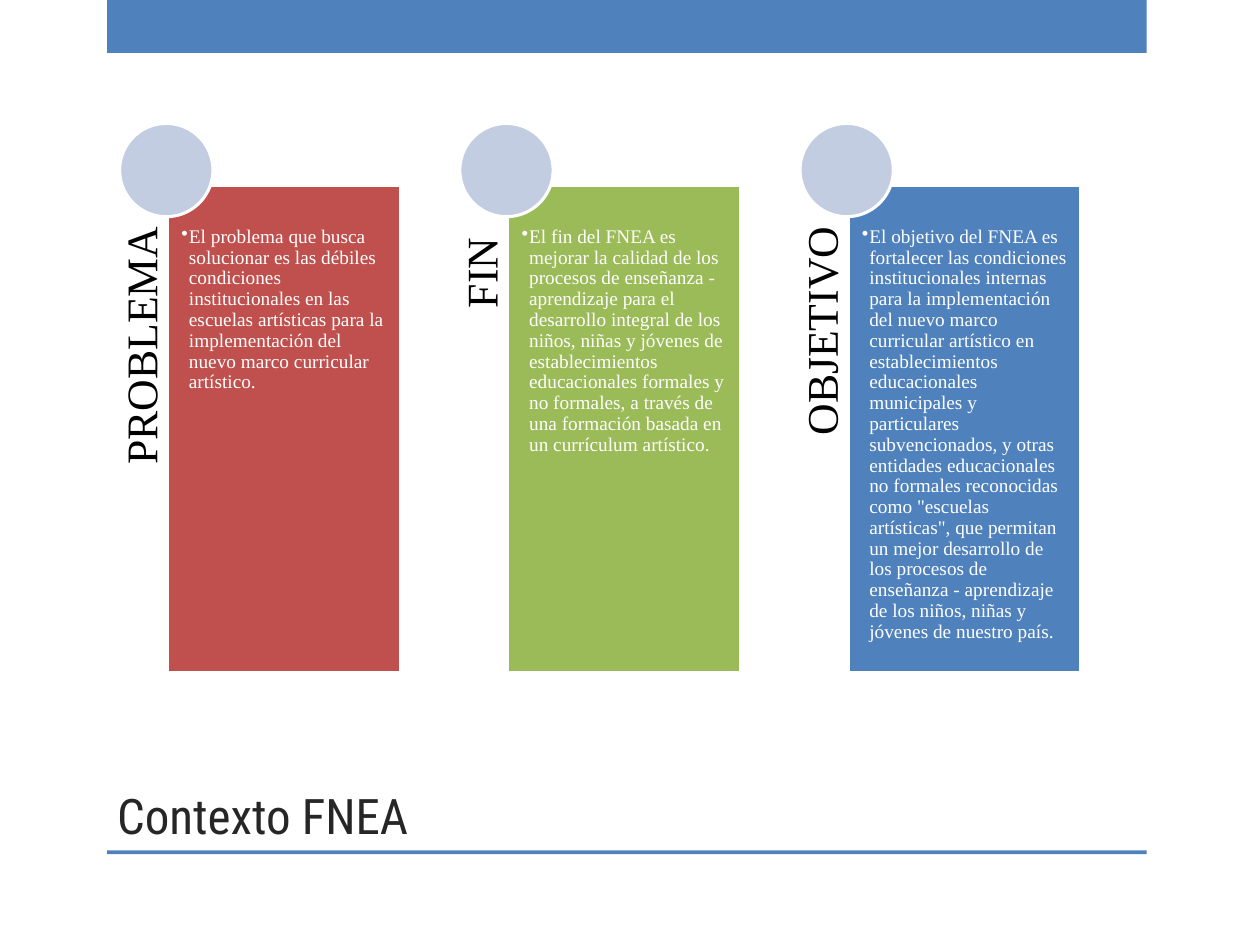
from dataclasses import dataclass

from lxml import etree
from pptx import Presentation
from pptx.dml.color import RGBColor
from pptx.enum.shapes import MSO_SHAPE
from pptx.enum.text import MSO_ANCHOR, PP_ALIGN
from pptx.oxml.ns import qn
from pptx.util import Inches, Pt

RECTANGLE, OVAL = MSO_SHAPE.RECTANGLE, MSO_SHAPE.OVAL
TOP, BOTTOM = MSO_ANCHOR.TOP, MSO_ANCHOR.BOTTOM
LEFT, RIGHT = PP_ALIGN.LEFT, PP_ALIGN.RIGHT
TITLE_ONLY_LAYOUT = 5


@dataclass(frozen=True)
class Theme:
    blue: str = "4F81BD"
    red: str = "C0504D"
    green: str = "9BBB59"
    circle: str = "C2CDE1"
    white: str = "FFFFFF"
    black: str = "000000"
    title: str = "262626"
    title_font: str = "Roboto Condensed"
    body_font: str = "Times New Roman"
    title_size: float = 28
    label_size: float = 25
    body_size: float = 11
    outline: float = 1.75


@dataclass(frozen=True)
class Box:
    left: float
    top: float
    width: float
    height: float

    def lengths(self) -> tuple:
        return tuple(Inches(n) for n in (self.left, self.top, self.width, self.height))


@dataclass(frozen=True)
class Column:
    label: str
    text: str
    color: str


THEME = Theme()
COLUMN_LEFT, COLUMN_PITCH = 0.95, 2.7
COLUMNS = (
    Column(
        "PROBLEMA",
        "El problema que busca solucionar es las débiles condiciones institucionales "
        "en las escuelas artísticas para la implementación del nuevo marco curricular "
        "artístico.",
        THEME.red,
    ),
    Column(
        "FIN ",
        "El fin del FNEA es mejorar la calidad de los procesos de enseñanza - "
        "aprendizaje para el desarrollo integral de los niños, niñas y jóvenes de "
        "establecimientos educacionales formales y no formales, a través de una "
        "formación basada en un currículum artístico.",
        THEME.green,
    ),
    Column(
        "OBJETIVO",
        "El objetivo del FNEA es fortalecer las condiciones institucionales internas "
        "para la implementación del nuevo marco curricular artístico en "
        "establecimientos educacionales municipales y particulares subvencionados, y "
        'otras entidades educacionales no formales reconocidas como "escuelas '
        'artísticas", que permitan un mejor desarrollo de los procesos de enseñanza - '
        "aprendizaje de los niños, niñas y jóvenes de nuestro país.",
        THEME.blue,
    ),
)


def add_filled_shape(slide, kind, box: Box, color: str, outlined: bool = False):
    shape = slide.shapes.add_shape(kind, *box.lengths())
    shape.shadow.inherit = False
    shape.fill.solid()
    shape.fill.fore_color.rgb = RGBColor.from_string(color)
    if outlined:
        shape.line.color.rgb = RGBColor.from_string(THEME.white)
        shape.line.width = Pt(THEME.outline)
    else:
        shape.line.fill.background()
    return shape


def write_text(shape, text: str, *, size: float, color: str, font: str = THEME.body_font,
               align=LEFT, anchor=TOP, insets: tuple = (0.1, 0.05, 0.1, 0.05),
               line_spacing: float = 0.9, bullet_indent: float = 0) -> None:
    """Fill a shape with one paragraph; insets are left, top, right, bottom."""
    frame = shape.text_frame
    frame.word_wrap = True
    frame.vertical_anchor = anchor
    (frame.margin_left, frame.margin_top,
     frame.margin_right, frame.margin_bottom) = map(Inches, insets)
    paragraph = frame.paragraphs[0]
    paragraph.alignment = align
    paragraph.line_spacing = line_spacing
    run = paragraph.add_run()
    run.text = text
    run.font.name = font
    run.font.size = Pt(size)
    run.font.color.rgb = RGBColor.from_string(color)
    if bullet_indent:
        properties = paragraph._p.get_or_add_pPr()
        properties.set("marL", str(Inches(bullet_indent)))
        properties.set("indent", str(-Inches(bullet_indent)))
        etree.SubElement(properties, qn("a:buChar")).set("char", "•")


def add_column(slide, column: Column, left: float) -> None:
    label = slide.shapes.add_textbox(*Box(left - 1.75, 3.22, 3.87, 0.37).lengths())
    label.rotation = 270
    write_text(label, column.label, size=THEME.label_size, color=THEME.black,
               align=RIGHT, insets=(0, 0, 0.33, 0))
    panel = add_filled_shape(slide, RECTANGLE, Box(left + 0.38, 1.47, 1.85, 3.87),
                             column.color, outlined=True)
    write_text(panel, column.text, size=THEME.body_size, color=THEME.white,
               insets=(0.11, 0.33, 0.11, 0.11), bullet_indent=0.06)
    add_filled_shape(slide, OVAL, Box(left, 0.98, 0.74, 0.74), THEME.circle, outlined=True)


def main() -> None:
    presentation = Presentation()
    presentation.slide_width, presentation.slide_height = Inches(10), Inches(7.5)
    slide = presentation.slides.add_slide(presentation.slide_layouts[TITLE_ONLY_LAYOUT])

    for band in (Box(0.85, 0, 8.25, 0.42), Box(0.85, 6.75, 8.25, 0.03)):
        add_filled_shape(slide, RECTANGLE, band, THEME.blue)

    title = slide.shapes.title
    title.left, title.top, title.width, title.height = Box(0.83, 5, 7.42, 1.75).lengths()
    write_text(title, "Contexto FNEA", size=THEME.title_size, color=THEME.title,
               font=THEME.title_font, anchor=BOTTOM, line_spacing=1.0)

    for index, column in enumerate(COLUMNS):
        add_column(slide, column, COLUMN_LEFT + index * COLUMN_PITCH)

    presentation.save("out.pptx")


if __name__ == "__main__":
    main()
